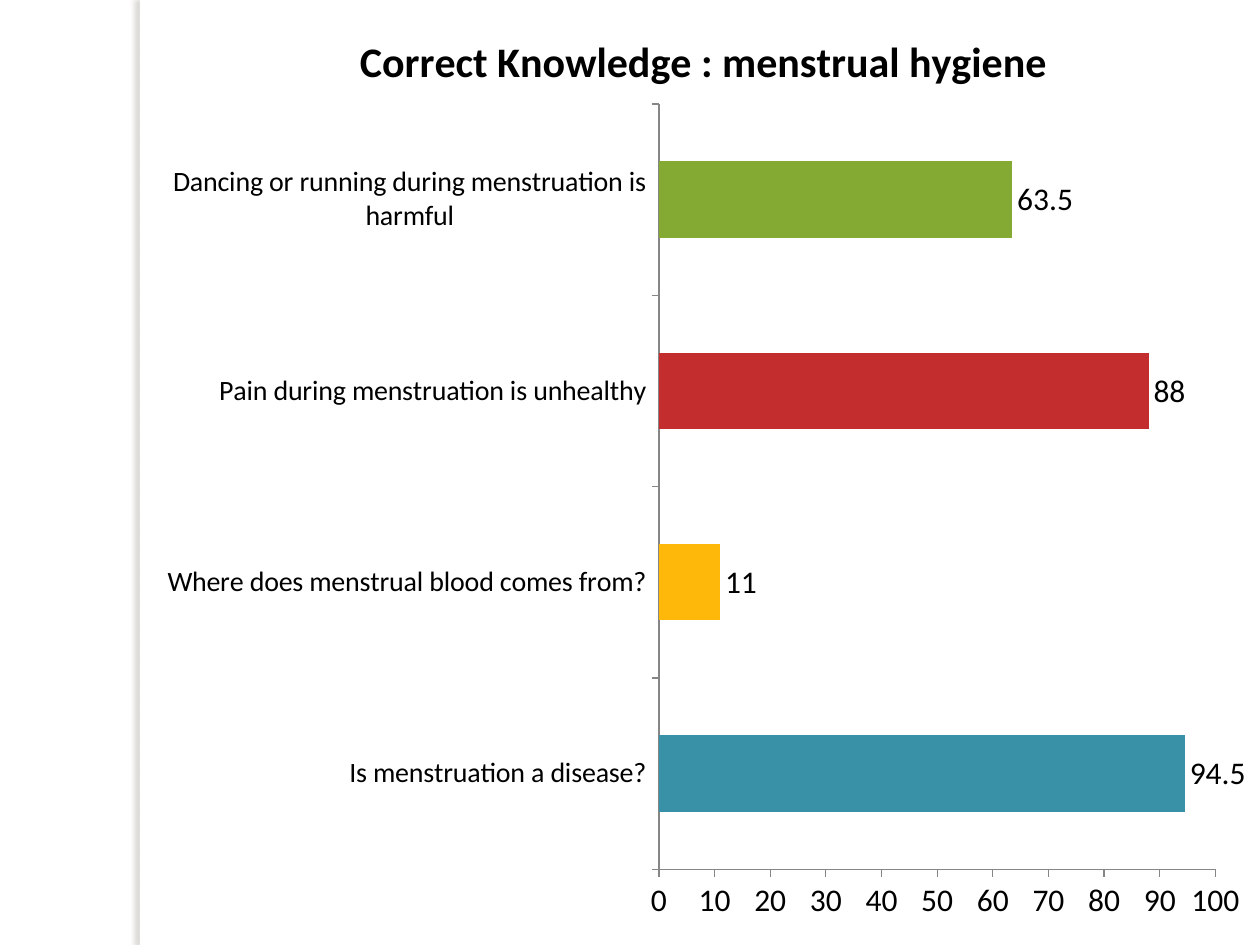
from lxml import etree
from pptx import Presentation
from pptx.chart.data import CategoryChartData
from pptx.dml.color import RGBColor
from pptx.enum.chart import XL_CHART_TYPE, XL_LABEL_POSITION, XL_TICK_MARK
from pptx.enum.shapes import MSO_SHAPE
from pptx.oxml import parse_xml
from pptx.oxml.ns import nsdecls
from pptx.util import Emu, Pt

BAR = XL_CHART_TYPE.BAR_CLUSTERED
OUTSIDE_END = XL_LABEL_POSITION.OUTSIDE_END
TICK_OUT, TICK_NONE = XL_TICK_MARK.OUTSIDE, XL_TICK_MARK.NONE
RECT = MSO_SHAPE.RECTANGLE

# Content: question, percentage correct, bar colour (bottom to top)
TITLE = "Correct Knowledge : menstrual hygiene"
ANSWERS = [
    ("Is menstruation a disease?", 94.5, "teal"),
    ("Where does menstrual blood comes from?", 11, "amber"),
    ("Pain during menstruation is unhealthy", 88, "red"),
    ("Dancing or running during menstruation is harmful", 63.5, "green"),
]
COLORS = {
    "teal": "3891A7", "amber": "FEB80A", "red": "C32D2E", "green": "84AA33",
    "text": "000000", "axis": "868686", "white": "FFFFFF", "shadow": "736F63",
}
FONT = "Calibri"

# Geometry in px
SLIDE = (1260, 945)
STRIP = (140, 0, 10, 945)
CHART = (147, 0, 1113, 945)
PLOT = (661, 108, 552, 767)


def px(n):
    return Emu(round(n * 914400 / 126))


def color(name):
    return RGBColor.from_string(COLORS[name])


def set_font(font, size, bold=False):
    for name, value in {"name": FONT, "size": Pt(size), "bold": bold}.items():
        setattr(font, name, value)
    font.color.rgb = color("text")


def add_strip(s):
    sp = s.shapes.add_shape(RECT, *map(px, STRIP))
    sp.fill.solid()
    sp.fill.fore_color.rgb = color("white")
    sp.line.fill.background()
    sp._element.spPr.append(parse_xml(
        f'<a:effectLst {nsdecls("a")}><a:outerShdw blurRad="38100" dist="38100" '
        f'dir="10800000" algn="tl" rotWithShape="0"><a:srgbClr val="{COLORS["shadow"]}">'
        '<a:alpha val="25000"/></a:srgbClr></a:outerShdw></a:effectLst>'))


def place_plot(chart):
    """Fix the inner plot area as fractions of the chart frame."""
    left, top, width, height = CHART
    x, y, w, h = PLOT
    parts = {"x": (x - left) / width, "y": (y - top) / height,
             "w": w / width, "h": h / height}
    plot_area = chart._chartSpace.chart.plotArea
    for old in plot_area.findall("{*}layout"):
        plot_area.remove(old)
    layout = parse_xml(
        f'<c:layout {nsdecls("c")}><c:manualLayout><c:layoutTarget val="inner"/>'
        '<c:xMode val="edge"/><c:yMode val="edge"/></c:manualLayout></c:layout>')
    ns = layout.nsmap["c"]
    for key, value in parts.items():
        etree.SubElement(layout[0], f"{{{ns}}}{key}").set("val", f"{value:.2f}")
    plot_area.insert(0, layout)


def add_answer_chart(s):
    data = CategoryChartData()
    data.categories = [question for question, _, _ in ANSWERS]
    data.add_series("Series 1", [value for _, value, _ in ANSWERS])
    chart = s.shapes.add_chart(BAR, *map(px, CHART), data).chart
    set_font(chart.font, 10)
    chart.has_legend = False

    # Title
    chart.has_title = True
    tf = chart.chart_title.text_frame
    tf.text = TITLE
    set_font(tf.paragraphs[0].runs[0].font, 24, bold=True)
    chart.chart_title.include_in_layout = False

    # Axes
    for axis, size in ((chart.category_axis, 16), (chart.value_axis, 18)):
        axis.has_major_gridlines = False
        axis.major_tick_mark = TICK_OUT
        axis.minor_tick_mark = TICK_NONE
        axis.format.line.color.rgb = color("axis")
        set_font(axis.tick_labels.font, size)
    for name, value in {"minimum_scale": 0, "maximum_scale": 100, "major_unit": 10}.items():
        setattr(chart.value_axis, name, value)

    # Bars and value labels
    plot = chart.plots[0]
    plot.gap_width = 150
    plot.vary_by_categories = False
    series = plot.series[0]
    for i, (_, _, name) in enumerate(ANSWERS):
        fill = series.points[i].format.fill
        fill.solid()
        fill.fore_color.rgb = color(name)
    labels = series.data_labels
    labels.show_value = True
    labels.position = OUTSIDE_END
    set_font(labels.font, 18)
    place_plot(chart)


def main():
    prs = Presentation()
    prs.slide_width, prs.slide_height = map(px, SLIDE)
    s = prs.slides.add_slide(prs.slide_layouts[6])
    add_strip(s)
    add_answer_chart(s)
    prs.save("out.pptx")


if __name__ == "__main__":
    main()
